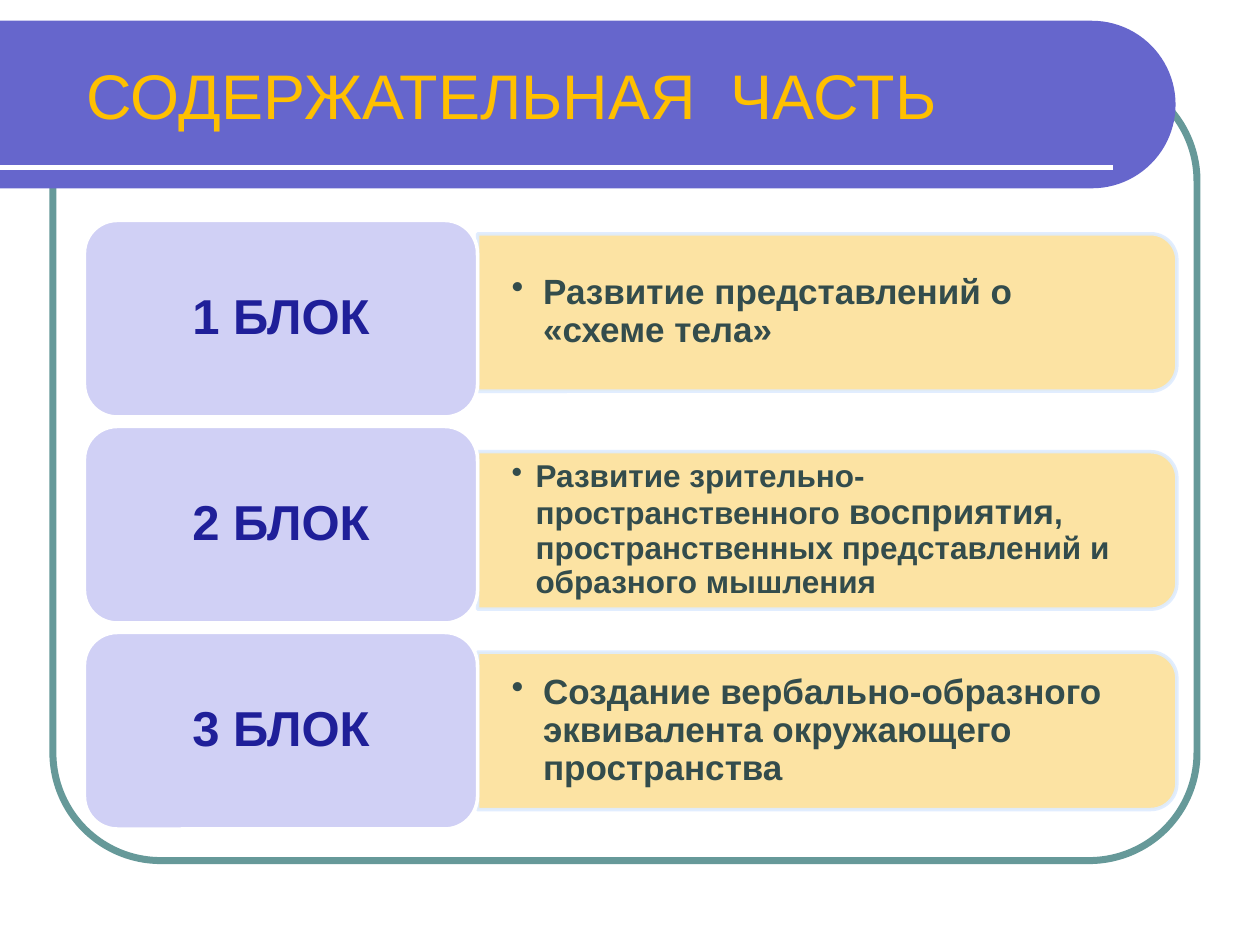
from lxml.etree import SubElement
from pptx import Presentation
from pptx.dml.color import RGBColor
from pptx.enum.shapes import MSO_CONNECTOR as Connector, MSO_SHAPE as Shape
from pptx.enum.text import MSO_ANCHOR as Anchor, PP_ALIGN as Align
from pptx.oxml.ns import qn
from pptx.util import Inches, Pt

TEAL = RGBColor(0x66, 0x99, 0x99)
VIOLET = RGBColor(0x66, 0x66, 0xCC)
WHITE = RGBColor(0xFF, 0xFF, 0xFF)
GOLD = RGBColor(0xFF, 0xC0, 0x00)
CREAM = RGBColor(0xFC, 0xE0, 0x9A)
PALE_BLUE = RGBColor(0xDE, 0xEC, 0xFF)
LAVENDER = RGBColor(0xD0, 0xD0, 0xF5)
NAVY = RGBColor(0x1F, 0x1F, 0x99)
SLATE = RGBColor(0x33, 0x4C, 0x4C)

FONT = "Arial"
# Grid of the blocks: two columns, three rows
LABEL_LEFT, LABEL_WIDTH, LABEL_HEIGHT = 0.67, 3.12, 1.56
PANEL_LEFT, PANEL_WIDTH, PANEL_HEIGHT = 3.79, 5.55, 1.25
FIRST_ROW, ROW_PITCH = 1.75, 1.635

# Label, panel centre, bullet indent, runs of (text, size)
BLOCKS = [
    ("1 БЛОК", 2.48, 0.25, [("Развитие представлений о «схеме тела»", 20)]),
    ("2 БЛОК", 4.21, 0.19, [
        ("Развитие зрительно-пространственного ", 18),
        ("восприятия", 20),
        (", пространственных представлений и образного мышления", 18),
    ]),
    ("3 БЛОК", 5.8, 0.25, [
        ("Создание вербально-образного эквивалента окружающего пространства", 20),
    ]),
]


def add_box(slide, kind, left, top, width, height, fill=None, line=None, weight=2):
    box = slide.shapes.add_shape(
        kind, Inches(left), Inches(top), Inches(width), Inches(height))
    box.shadow.inherit = False
    if fill is None:
        box.fill.background()
    else:
        box.fill.solid()
        box.fill.fore_color.rgb = fill
    if line is None:
        box.line.fill.background()
    else:
        box.line.color.rgb = line
        box.line.width = Pt(weight)
    return box


def add_right_rounded(slide, left, middle, width, height, fill, line=None):
    """A bar with rounded right corners: a top-rounded one turned by 90°."""
    centre = left + width / 2
    bar = add_box(slide, Shape.ROUND_2_SAME_RECTANGLE, centre - height / 2,
                  middle - width / 2, height, width, fill, line)
    bar.rotation = 90
    return bar


def set_opacity(colour_format, percent):
    colour = colour_format._xPr.find(".//" + qn("a:srgbClr"))
    SubElement(colour, qn("a:alpha")).set("val", str(percent * 1000))


def add_text_area(slide, left, top, width, height):
    area = slide.shapes.add_textbox(
        Inches(left), Inches(top), Inches(width), Inches(height))
    return area.text_frame


def write(frame, runs, colour, bold=True, align=Align.LEFT, spacing=0.9,
          margins=(0.1, 0.05)):
    frame.word_wrap = True
    frame.vertical_anchor = Anchor.MIDDLE
    frame.margin_left = frame.margin_right = Inches(margins[0])
    frame.margin_top = frame.margin_bottom = Inches(margins[1])
    paragraph = frame.paragraphs[0]
    paragraph.alignment = align
    paragraph.line_spacing = spacing
    for text, size in runs:
        run = paragraph.add_run()
        run.text = text
        run.font.name = FONT
        run.font.size = Pt(size)
        run.font.bold = bold
        run.font.color.rgb = colour
    return paragraph


def add_bullet(paragraph, indent):
    properties = paragraph._p.get_or_add_pPr()
    properties.set("marL", str(Inches(indent)))
    properties.set("indent", str(-Inches(indent)))
    SubElement(properties, qn("a:buChar")).set("char", "•")


def add_header(slide):
    frame = add_box(slide, Shape.ROUNDED_RECTANGLE, 0.42, 0.58, 9.08, 6.25,
                    line=TEAL, weight=4)
    frame.adjustments[0] = 0.137

    banner = add_right_rounded(slide, 0, 0.83, 9.33, 1.33, VIOLET)
    banner.adjustments[0] = 0.5

    underline = slide.shapes.add_connector(
        Connector.STRAIGHT, 0, Inches(1.33), Inches(8.83), Inches(1.33))
    underline.line.color.rgb = WHITE
    underline.line.width = Pt(3)
    SubElement(underline._element.spPr, qn("a:effectLst"))


def add_block(slide, row, label, middle, indent, description):
    panel = add_right_rounded(slide, PANEL_LEFT, middle, PANEL_WIDTH,
                              PANEL_HEIGHT, CREAM, PALE_BLUE)
    set_opacity(panel.fill, 90)
    set_opacity(panel.line.fill, 90)

    area = add_text_area(slide, PANEL_LEFT, middle - 0.56, 5.49, 1.12)
    paragraph = write(area, description, SLATE, margins=(0.27, 0.14))
    add_bullet(paragraph, indent)

    name = add_box(slide, Shape.ROUNDED_RECTANGLE, LABEL_LEFT,
                   FIRST_ROW + row * ROW_PITCH, LABEL_WIDTH, LABEL_HEIGHT,
                   LAVENDER, WHITE)
    write(name.text_frame, [(label, 28)], NAVY, align=Align.CENTER)


def main():
    deck = Presentation()
    deck.slide_width, deck.slide_height = Inches(10), Inches(7.5)
    slide = deck.slides.add_slide(deck.slide_layouts[6])

    # Frame, banner and its underline
    add_header(slide)

    # Three blocks with their descriptions
    for row, block in enumerate(BLOCKS):
        add_block(slide, row, *block)

    # Title
    title = add_text_area(slide, 0.59, 0.25, 8.39, 1)
    write(title, [("СОДЕРЖАТЕЛЬНАЯ  ЧАСТЬ", 36)], GOLD, bold=False, spacing=1.0)

    deck.save("out.pptx")


if __name__ == "__main__":
    main()
